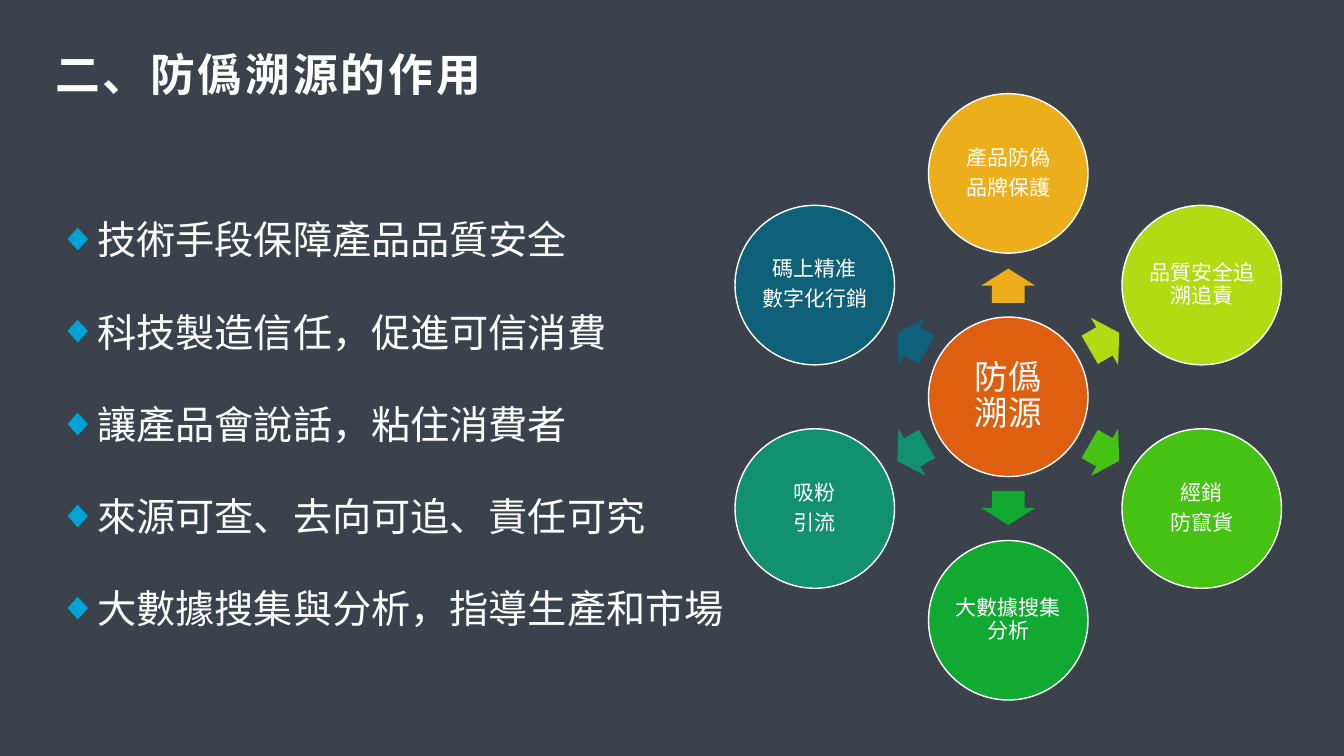
from dataclasses import dataclass
from math import cos, radians, sin

from lxml import etree
from pptx import Presentation
from pptx.dml.color import RGBColor
from pptx.enum import shapes as sh, text as tx
from pptx.oxml import ns
from pptx.shapes.autoshape import Shape
from pptx.slide import Slide
from pptx.text.text import TextFrame
from pptx.util import Cm, Pt

SLATE = RGBColor(0x3B, 0x42, 0x4B)
WHITE = RGBColor(0xFF, 0xFF, 0xFF)
BLUE = RGBColor(0x00, 0xA3, 0xD5)
RUST = RGBColor(0xDE, 0x5F, 0x0F)
GOLD = RGBColor(0xED, 0xAE, 0x1B)
LIME = RGBColor(0xB2, 0xDB, 0x13)
GRASS = RGBColor(0x45, 0xC2, 0x13)
GREEN = RGBColor(0x12, 0xA9, 0x33)
TEAL = RGBColor(0x11, 0x91, 0x6E)
NAVY = RGBColor(0x0F, 0x60, 0x79)

FONT = "Arial"
# Wheel measures in cm: hub centre, circle width, distances from the hub
HUB_X, HUB_Y = 25.41, 10.0
DISC = 4.02
RING, GAP = 5.63, 2.8
ARROW_W, ARROW_H = 0.86, 1.37


@dataclass
class Node:
    label: str
    color: RGBColor


# Clockwise from the top
NODES = [
    Node("產品防偽\n品牌保護", GOLD),
    Node("品質安全追溯追責", LIME),
    Node("經銷\n防竄貨", GRASS),
    Node("大數據搜集分析", GREEN),
    Node("吸粉\n引流", TEAL),
    Node("碼上精准\n數字化行銷", NAVY),
]
ROLES = [
    "技術手段保障產品品質安全",
    "科技製造信任，促進可信消費",
    "讓產品會說話，粘住消費者",
    "來源可查、去向可追、責任可究",
    "大數據搜集與分析，指導生產和市場",
]


def style(frame: TextFrame, size: float, bold: bool = False) -> None:
    for para in frame.paragraphs:
        para.font.name = FONT
        para.font.size = Pt(size)
        para.font.bold = bold
        para.font.color.rgb = WHITE


def place(shape: Shape, x: float, y: float, w: float, h: float) -> None:
    shape.left, shape.top, shape.width, shape.height = map(Cm, (x, y, w, h))


def add_form(slide: Slide, kind: sh.MSO_SHAPE, x: float, y: float,
             w: float, h: float, color: RGBColor) -> Shape:
    """Add a filled shape centred on x, y."""
    form = slide.shapes.add_shape(
        kind, Cm(x - w / 2), Cm(y - h / 2), Cm(w), Cm(h))
    form.shadow.inherit = False
    form.fill.solid()
    form.fill.fore_color.rgb = color
    form.line.fill.background()
    return form


def add_disc(slide: Slide, node: Node, x: float, y: float,
             size: float, inset: float) -> None:
    disc = add_form(slide, sh.MSO_SHAPE.OVAL, x, y, DISC, DISC, node.color)
    disc.line.color.rgb = WHITE
    disc.line.width = Pt(1)
    frame = disc.text_frame
    frame.word_wrap = True
    frame.vertical_anchor = tx.MSO_ANCHOR.MIDDLE
    frame.margin_left = frame.margin_right = Cm(inset)
    frame.margin_top = frame.margin_bottom = Cm(inset)
    frame.text = node.label
    style(frame, size)
    for para in frame.paragraphs:
        para.alignment = tx.PP_ALIGN.CENTER
        para.line_spacing = 0.9
        para.space_after = Pt(size * 0.35)


def add_wheel(slide: Slide) -> None:
    add_disc(slide, Node("防僞 溯源", RUST), HUB_X, HUB_Y, 24, 0.08)
    for i, node in enumerate(NODES):
        turn = i * 360 / len(NODES) - 90
        dx, dy = cos(radians(turn)), sin(radians(turn))
        arrow = add_form(slide, sh.MSO_SHAPE.RIGHT_ARROW, HUB_X + GAP * dx,
                         HUB_Y + GAP * dy, ARROW_W, ARROW_H, node.color)
        arrow.adjustments[0] = 0.6
        arrow.rotation = turn % 360
        add_disc(slide, node, HUB_X + RING * dx, HUB_Y + RING * dy, 15, 0.05)


def add_title(slide: Slide) -> None:
    title = slide.shapes.title
    place(title, 0.4, 1.04, 12.72, 1.63)
    frame = title.text_frame
    frame.text = "二、防僞溯源的作用"
    frame.auto_size = tx.MSO_AUTO_SIZE.NONE
    frame.vertical_anchor = tx.MSO_ANCHOR.MIDDLE
    style(frame, 32, bold=True)
    para = frame.paragraphs[0]
    para.alignment = tx.PP_ALIGN.CENTER
    para.runs[0].font._element.set("spc", "200")


def add_bullet(props: etree._Element) -> None:
    props.set("marL", str(Cm(0.97)))
    props.set("indent", str(-Cm(0.97)))
    tint = etree.Element(ns.qn("a:buClr"))
    etree.SubElement(tint, ns.qn("a:srgbClr"), val=str(BLUE))
    mark = etree.Element(ns.qn("a:buChar"), char="◆")
    # Bullet settings stand before the default run settings
    fonts = props.find(ns.qn("a:defRPr"))
    fonts.addprevious(tint)
    fonts.addprevious(mark)


def add_list(slide: Slide) -> None:
    body = slide.placeholders[1]
    place(body, 1.22, 5.31, 17.45, 11.02)
    frame = body.text_frame
    frame.text = "\n".join(ROLES)
    frame.auto_size = tx.MSO_AUTO_SIZE.NONE
    frame.vertical_anchor = tx.MSO_ANCHOR.TOP
    style(frame, 28)
    for para in frame.paragraphs:
        para.space_before = Pt(0)
        para.space_after = Pt(32.2)
        add_bullet(para._p.get_or_add_pPr())


def main() -> None:
    deck = Presentation()
    deck.slide_width, deck.slide_height = Cm(33.87), Cm(19.05)
    slide = deck.slides.add_slide(deck.slide_layouts[1])
    slide.background.fill.solid()
    slide.background.fill.fore_color.rgb = SLATE
    add_wheel(slide)
    add_list(slide)
    add_title(slide)
    deck.save("out.pptx")


if __name__ == "__main__":
    main()
